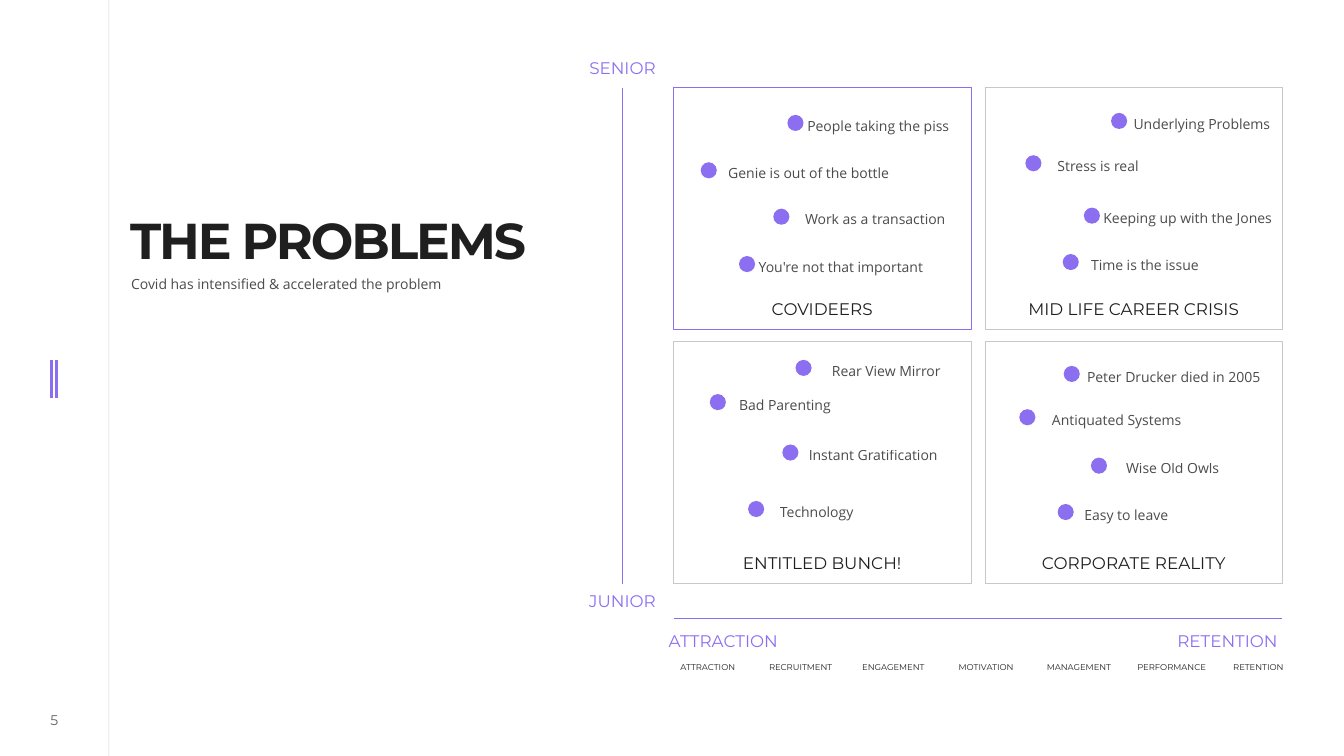
from lxml.etree import SubElement
from pptx import Presentation
from pptx.dml.color import RGBColor
from pptx.enum.shapes import MSO_CONNECTOR, MSO_SHAPE
from pptx.enum.text import MSO_ANCHOR, MSO_AUTO_SIZE, PP_ALIGN
from pptx.oxml.ns import qn
from pptx.util import Inches, Pt

QUADRANT_WIDTH, QUADRANT_HEIGHT = 2.95, 2.4

# Caption, left, top, outline, then problems as (dot left, dot top, label width, label)
QUADRANTS = [
    ("COVIDEERS", 6.68, 0.87, "8C6FF0", [
        (7.81, 1.14, 1.64, "People taking the piss"),
        (6.95, 1.61, 1.98, "Genie is out of the bottle"),
        (7.67, 2.07, 1.86, "Work as a transaction"),
        (7.33, 2.54, 1.86, "You're not that important"),
    ]),
    ("MID LIFE CAREER CRISIS", 9.77, 0.87, "C7C7C7", [
        (11.02, 1.12, 1.64, "Underlying Problems"),
        (10.17, 1.54, 1.28, "Stress is real"),
        (10.75, 2.06, 1.9, "Keeping up with the Jones"),
        (10.54, 2.52, 1.47, "Time is the issue"),
    ]),
    ("ENTITLED BUNCH!", 6.68, 3.39, "C7C7C7", [
        (7.89, 3.57, 1.64, "Rear View Mirror"),
        (7.04, 3.91, 1.33, "Bad Parenting"),
        (7.76, 4.41, 1.64, "Instant Gratification"),
        (7.42, 4.97, 1.2, "Technology"),
    ]),
    ("CORPORATE REALITY", 9.77, 3.39, "C7C7C7", [
        (10.55, 3.63, 2.02, "Peter Drucker died in 2005"),
        (10.11, 4.06, 1.77, "Antiquated Systems"),
        (10.82, 4.54, 1.46, "Wise Old Owls"),
        (10.49, 5.0, 1.2, "Easy to leave"),
    ]),
]
AXIS_ENDS = [("SENIOR", 4.86, 0.58), ("JUNIOR", 4.86, 5.87),
             ("ATTRACTION", 5.86, 6.26), ("RETENTION", 10.86, 6.26)]
STAGES = ["ATTRACTION", "RECRUITMENT", "ENGAGEMENT", "MOTIVATION",
          "MANAGEMENT", "PERFORMANCE", "RETENTION"]


def paint(fill, color, opacity=100):
    """Give a fill a solid hex colour, with opacity in percent."""
    fill.solid()
    fill.fore_color.rgb = RGBColor.from_string(color)
    if opacity < 100:
        srgb = fill._xPr.find(qn("a:solidFill")).find(qn("a:srgbClr"))
        SubElement(srgb, qn("a:alpha"), val=str(opacity * 1000))


class ProblemsSlide:
    HEADING, BODY = "Montserrat", "Open Sans"
    INK, ACCENT = "1F1F1F", "8C6FF0"

    def __init__(self, slide):
        self.slide = slide
        self.shapes = slide.shapes

    def style(self, paragraph, font, size, color, opacity=100,
              align=PP_ALIGN.CENTER, spacing=1.0):
        paragraph.alignment = align
        paragraph.line_spacing = spacing
        paragraph.font.name = font
        paragraph.font.size = Pt(size)
        paint(paragraph.font.fill, color, opacity)

    def title(self, text):
        title = self.shapes.title
        title.left, title.top = Inches(1.29), Inches(1.98)
        title.width, title.height = Inches(4.56), Inches(1.77)
        frame = title.text_frame
        frame.text = text
        frame.auto_size = MSO_AUTO_SIZE.NONE
        frame.vertical_anchor = MSO_ANCHOR.TOP
        frame.margin_left = frame.margin_right = frame.margin_bottom = 0
        frame.margin_top = Inches(0.21)
        heading = frame.paragraphs[0]
        self.style(heading, self.HEADING, 36, self.INK, align=PP_ALIGN.LEFT, spacing=0.8)
        heading.font.bold = True
        heading.runs[0].font._element.set("spc", "-150")

    def text(self, text, left, top, width, height, shapes=None, **style):
        box = (shapes or self.shapes).add_textbox(
            Inches(left), Inches(top), Inches(width), Inches(height))
        frame = box.text_frame
        frame.word_wrap = True
        frame.auto_size = MSO_AUTO_SIZE.SHAPE_TO_FIT_TEXT
        frame.margin_left = frame.margin_right = 0
        frame.margin_top = frame.margin_bottom = Inches(0.05)
        frame.text = text
        self.style(frame.paragraphs[0], **style)
        return frame

    def caption(self, text, left, top, color):
        self.text(text, left, top, 2.63, 0.26, font=self.HEADING, size=12,
                  color=color, spacing=0.7)

    def page_number(self, number):
        frame = self.text(number, 0.26, 7.02, 0.56, 0.25, font=self.HEADING,
                          size=10, color=self.INK, opacity=70)
        frame.auto_size = MSO_AUTO_SIZE.NONE
        frame.margin_top = frame.margin_bottom = 0
        frame.vertical_anchor = MSO_ANCHOR.MIDDLE

    def line(self, x1, y1, x2, y2, color=ACCENT, width=0.5, opacity=100):
        line = self.shapes.add_connector(
            MSO_CONNECTOR.STRAIGHT, Inches(x1), Inches(y1), Inches(x2), Inches(y2))
        line.line.width = Pt(width)
        paint(line.line.fill, color, opacity)
        SubElement(line._element.spPr, qn("a:effectLst"))

    def quadrant(self, caption, left, top, outline, problems):
        box = self.shapes.add_shape(
            MSO_SHAPE.RECTANGLE, Inches(left), Inches(top),
            Inches(QUADRANT_WIDTH), Inches(QUADRANT_HEIGHT))
        box.shadow.inherit = False
        box.fill.background()
        paint(box.line.fill, outline)
        box.line.width = Pt(0.5)
        self.caption(caption, left + 0.16, top + 2.1, self.INK)
        for problem in problems:
            self.problem(*problem)

    def problem(self, left, top, label_width, label):
        """Group a dot with its label."""
        shapes = self.shapes.add_group_shape().shapes
        dot = shapes.add_shape(MSO_SHAPE.OVAL, Inches(left), Inches(top),
                               Inches(0.16), Inches(0.16))
        dot.shadow.inherit = False
        paint(dot.fill, self.ACCENT)
        dot.line.fill.background()
        self.text(label, left + 0.08, top - 0.06, label_width, 0.29, shapes,
                  font=self.BODY, size=10, color=self.INK, opacity=80, spacing=1.2)


def main():
    deck = Presentation()
    deck.slide_width, deck.slide_height = Inches(13.33), Inches(7.5)
    page = ProblemsSlide(deck.slides.add_slide(deck.slide_layouts[5]))

    page.line(1.08, 0, 1.08, 7.5, page.INK, opacity=20)
    for bar_left in (0.51, 0.56):
        page.line(bar_left, 3.57, bar_left, 3.95, width=2)
    page.page_number("5")

    page.title("THE PROBLEMS")
    page.text("Covid has intensified & accelerated the problem", 1.3, 2.6, 4.35, 0.66,
              font=page.BODY, size=10, color=page.INK, opacity=80,
              align=PP_ALIGN.LEFT, spacing=1.5)

    for quadrant in QUADRANTS:
        page.quadrant(*quadrant)

    page.line(6.17, 0.87, 6.17, 5.79)
    page.line(12.72, 6.13, 6.68, 6.13)
    for name, left, top in AXIS_ENDS:
        page.caption(name, left, top, page.ACCENT)
    stages = page.shapes.add_group_shape().shapes
    for index, stage in enumerate(STAGES):
        page.text(stage, min(6.26 + 0.92 * index, 11.72), 6.55, 1.52, 0.17, stages,
                  font=page.HEADING, size=6, color=page.INK, spacing=0.7)

    deck.save("out.pptx")


if __name__ == "__main__":
    main()
